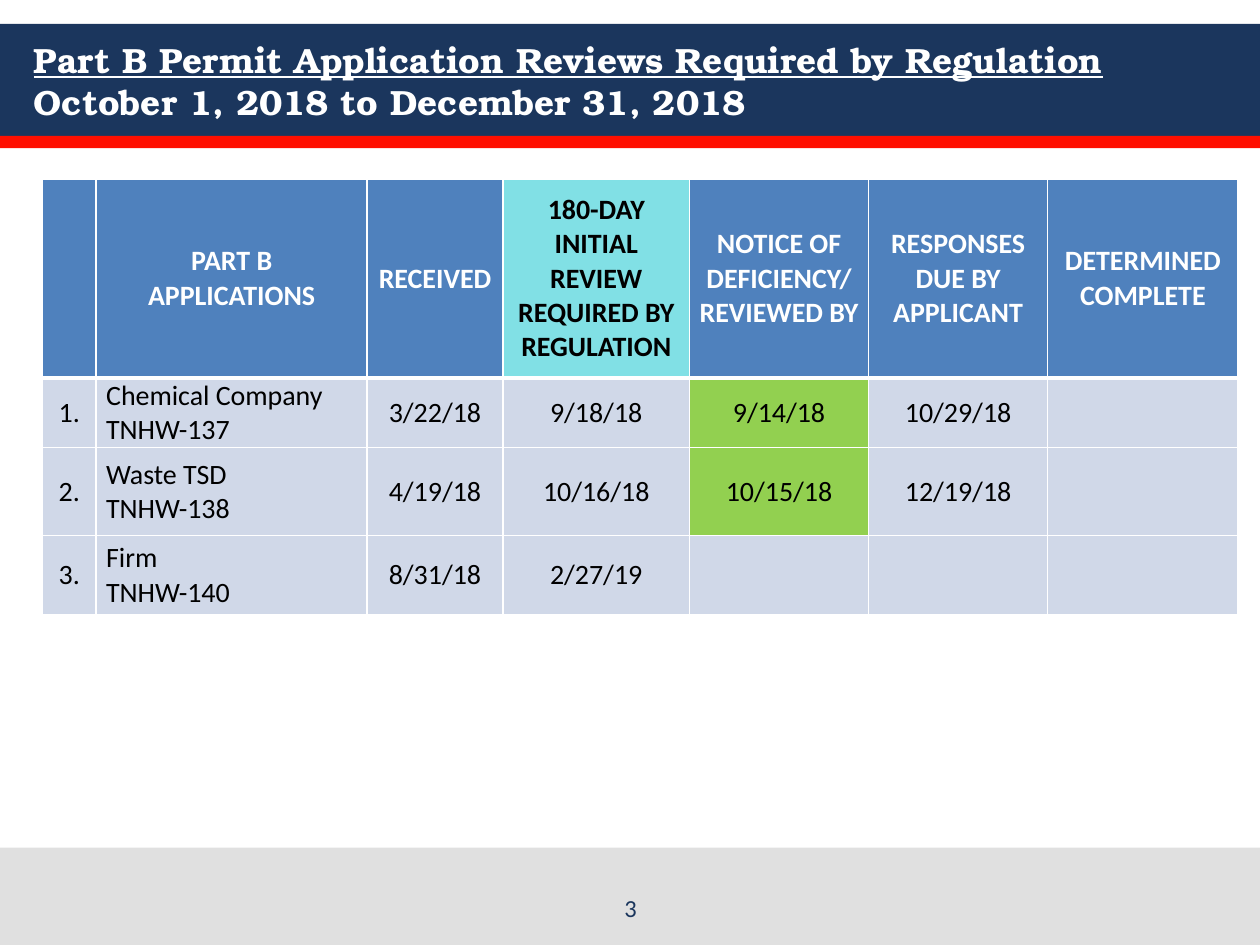
import pptx
import pptx.dml.color
import pptx.enum.shapes
import pptx.enum.text
import pptx.oxml
import pptx.oxml.ns
import pptx.util

Cm = pptx.util.Cm
Pt = pptx.util.Pt
ALIGN = pptx.enum.text.PP_ALIGN
ANCHOR = pptx.enum.text.MSO_ANCHOR

NAVY, RED, GREY = "1B365D", "FF0F00", "E0E0E0"
WHITE, BLACK = "FFFFFF", "000000"
HEADER_BLUE, REVIEW_CYAN, ROW_BLUE, DONE_GREEN = "4F81BD", "81E0E5", "D0D8E8", "92D050"

COLUMN_WIDTHS = [1.09, 5.46, 2.74, 3.76, 3.61, 3.61, 3.84]
ROW_HEIGHTS = [4.01, 1.4, 1.78, 1.6]
NAME_COLUMN, REVIEW_COLUMN, NOTICE_COLUMN = 1, 3, 4
APPLICATIONS = [
    ["", "PART B APPLICATIONS", "RECEIVED", "180-DAY INITIAL REVIEW\nREQUIRED BY REGULATION",
     "NOTICE OF DEFICIENCY/ REVIEWED BY", "RESPONSES DUE BY APPLICANT", "DETERMINED COMPLETE"],
    ["1.", "Chemical Company\nTNHW-137", "3/22/18", "9/18/18", "9/14/18", "10/29/18", ""],
    ["2.", "Waste TSD\nTNHW-138", "4/19/18", "10/16/18", "10/15/18", "12/19/18", ""],
    ["3.", "Firm\nTNHW-140", "8/31/18", "2/27/19", "", "", ""],
]


def rgb(value):
    return pptx.dml.color.RGBColor.from_string(value)


def add_run(paragraph, text, font, size, color, bold=False, underline=False):
    run = paragraph.add_run()
    run.text = text
    run.font.name = font
    run.font.size = Pt(size)
    run.font.color.rgb = rgb(color)
    run.font.bold = bold
    run.font.underline = underline


def add_band(slide, top, height, color):
    band = slide.shapes.add_shape(
        pptx.enum.shapes.MSO_SHAPE.RECTANGLE, 0, Cm(top), Cm(25.4), Cm(height))
    band.shadow.inherit = False
    band.fill.solid()
    band.fill.fore_color.rgb = rgb(color)
    band.line.fill.background()


def fill_title(slide):
    heading = slide.shapes.title
    heading.element.getparent().append(heading.element)
    heading.left, heading.top, heading.width, heading.height = Cm(0.43), Cm(0.48), Cm(24.56), Cm(2.29)
    frame = heading.text_frame
    frame.auto_size = pptx.enum.text.MSO_AUTO_SIZE.NONE
    frame.word_wrap = True
    frame.vertical_anchor = ANCHOR.MIDDLE
    paragraph = frame.paragraphs[0]
    paragraph.alignment = ALIGN.LEFT
    add_run(paragraph, "Part B Permit Application Reviews Required by Regulation",
            "TeX Gyre Bonum", 20, WHITE, bold=True, underline=True)
    paragraph.add_line_break()
    add_run(paragraph, "October 1, 2018 to December 31, 2018", "TeX Gyre Bonum", 20, WHITE, bold=True)


def set_borders(cell, top, bottom):
    properties = cell._tc.get_or_add_tcPr()
    for side, points in (("L", 1), ("R", 1), ("T", top), ("B", bottom)):
        properties.append(pptx.oxml.parse_xml(
            f'<a:ln{side} {pptx.oxml.ns.nsdecls("a")} w="{Pt(points)}"><a:solidFill>'
            f'<a:srgbClr val="{WHITE}"/></a:solidFill></a:ln{side}>'))


def cell_fill(row, column, text):
    if row == 0:
        return REVIEW_CYAN if column == REVIEW_COLUMN else HEADER_BLUE
    return DONE_GREEN if column == NOTICE_COLUMN and text else ROW_BLUE


def fill_cell(cell, row, column, text):
    is_header = row == 0
    set_borders(cell, top=3 if row == 1 else 1, bottom=3 if is_header else 1)
    cell.fill.solid()
    cell.fill.fore_color.rgb = rgb(cell_fill(row, column, text))
    cell.vertical_anchor = ANCHOR.MIDDLE
    cell.margin_left = cell.margin_right = Cm(0.2)
    cell.margin_top = cell.margin_bottom = 0
    if not text:
        return
    color = WHITE if is_header and column != REVIEW_COLUMN else BLACK
    for index, line in enumerate(text.split("\n")):
        frame = cell.text_frame
        paragraph = frame.add_paragraph() if index else frame.paragraphs[0]
        paragraph.alignment = ALIGN.LEFT if column == NAME_COLUMN and not is_header else ALIGN.CENTER
        add_run(paragraph, line, "Calibri", 16, color, bold=is_header)


def add_review_table(slide):
    reviews = slide.shapes.add_table(
        len(ROW_HEIGHTS), len(COLUMN_WIDTHS), Cm(0.85), Cm(3.61),
        Cm(sum(COLUMN_WIDTHS)), Cm(sum(ROW_HEIGHTS))).table
    reviews.horz_banding = False
    for column, width in zip(reviews.columns, COLUMN_WIDTHS):
        column.width = Cm(width)
    for row, height in zip(reviews.rows, ROW_HEIGHTS):
        row.height = Cm(height)
    for row, texts in enumerate(APPLICATIONS):
        for column, text in enumerate(texts):
            fill_cell(reviews.cell(row, column), row, column, text)


def add_page_number(slide):
    frame = slide.shapes.add_textbox(Cm(8.69), Cm(17.7), Cm(8.05), Cm(1.02)).text_frame
    frame.word_wrap = True
    frame.vertical_anchor = ANCHOR.BOTTOM
    paragraph = frame.paragraphs[0]
    paragraph.alignment = ALIGN.CENTER
    add_run(paragraph, "3", "Calibri", 14, NAVY)


def main():
    deck = pptx.Presentation()
    deck.slide_width, deck.slide_height = Cm(25.4), Cm(19.05)
    slide = deck.slides.add_slide(deck.slide_layouts.get_by_name("Title Only"))
    add_band(slide, 0.48, 2.26, NAVY)
    add_band(slide, 2.74, 0.25, RED)
    add_band(slide, 17.09, 1.96, GREY)
    fill_title(slide)
    add_review_table(slide)
    add_page_number(slide)
    deck.save("out.pptx")


if __name__ == "__main__":
    main()
